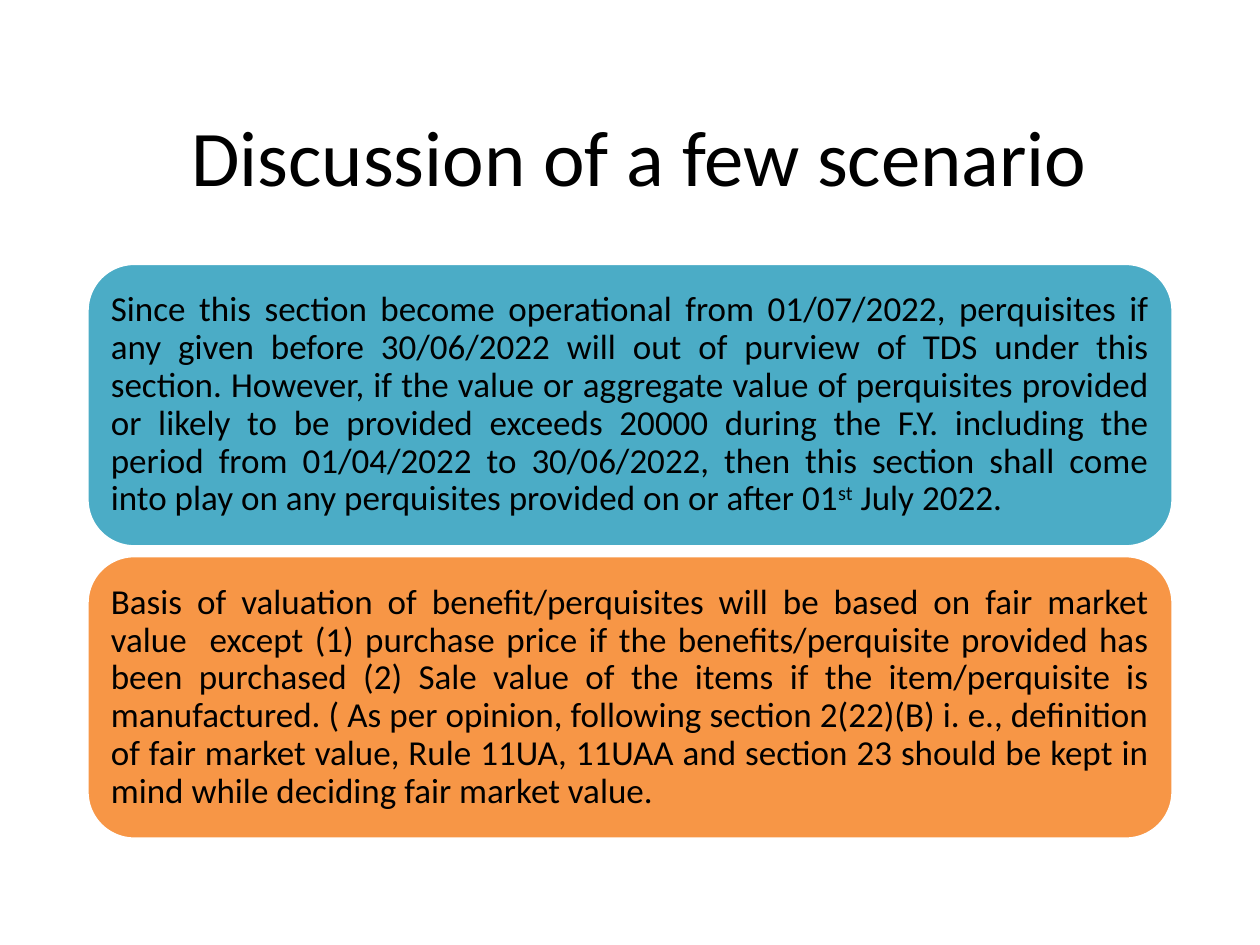
from pptx import Presentation
from pptx.dml.color import RGBColor
from pptx.enum.shapes import MSO_SHAPE
from pptx.enum.text import MSO_ANCHOR, PP_ALIGN
from pptx.util import Inches, Pt

ROUNDED = MSO_SHAPE.ROUNDED_RECTANGLE
MIDDLE = MSO_ANCHOR.MIDDLE
CENTER = PP_ALIGN.CENTER
JUSTIFY = PP_ALIGN.JUSTIFY

COLORS = {
    "text": "000000",
    "outline": "FFFFFF",
    "operation": "4BACC6",
    "valuation": "F79646",
}
LEFT, WIDTH = 0.69, 8.62
CARD_TOP, CARD_HEIGHT, CARD_GAP = 2.09, 2.25, 0.07

SCENARIOS = [
    ("operation", [
        ("Since this section become operational from 01/07/2022, perquisites if any "
         "given before 30/06/2022 will out of purview of TDS under this section. "
         "However, if the value or aggregate value of perquisites provided or likely "
         "to be provided exceeds 20000 during the F.Y. including the period from "
         "01/04/2022 to 30/06/2022, then this section shall come into play on any "
         "perquisites provided on or after 01", False),
        ("st", True),
        (" July 2022.", False),
    ]),
    ("valuation", [
        ("Basis of valuation of benefit/perquisites will be based on fair market "
         "value  except (1) purchase price if the benefits/perquisite provided has "
         "been purchased (2) Sale value of the items if the item/perquisite is "
         "manufactured. ( As per opinion, following section 2(22)(B) i. e., "
         "definition of fair market value, Rule 11UA, 11UAA and section 23 should be "
         "kept in mind while deciding fair market value.", False),
    ]),
]


def rgb(name):
    return RGBColor.from_string(COLORS[name])


def write(frame, parts, *, font, size, align, inset=None, spacing=1.0):
    frame.word_wrap = True
    frame.vertical_anchor = MIDDLE
    if inset is not None:
        frame.margin_left = frame.margin_right = Inches(inset)
        frame.margin_top = frame.margin_bottom = Inches(inset)
    paragraph = frame.paragraphs[0]
    paragraph.alignment = align
    paragraph.line_spacing = spacing
    for wording, raised in parts:
        run = paragraph.add_run()
        run.text = wording
        run.font.name = font
        run.font.size = Pt(size)
        run.font.color.rgb = rgb("text")
        if raised:
            run._r.get_or_add_rPr().set("baseline", "30000")


class ScenarioSlide:
    font = "Calibri"
    title_size = 45
    body_size = 20

    def __init__(self, slide):
        self.slide = slide

    def title(self, wording, left, top, width, height):
        heading = self.slide.shapes.add_textbox(
            Inches(left), Inches(top), Inches(width), Inches(height))
        write(heading.text_frame, [(wording, False)], font=self.font,
              size=self.title_size, align=CENTER)

    def card(self, parts, color, left, top, width, height):
        panel = self.slide.shapes.add_shape(
            ROUNDED, Inches(left), Inches(top), Inches(width), Inches(height))
        panel.shadow.inherit = False
        panel.fill.solid()
        panel.fill.fore_color.rgb = rgb(color)
        panel.line.color.rgb = rgb("outline")
        panel.line.width = Pt(2)
        write(panel.text_frame, parts, font=self.font, size=self.body_size,
              align=JUSTIFY, inset=0.08, spacing=0.9)


def main():
    deck = Presentation()
    deck.slide_width, deck.slide_height = Inches(10), Inches(7.5)
    page = ScenarioSlide(deck.slides.add_slide(deck.slide_layouts[6]))
    page.title(" Discussion of a few scenario", LEFT, 0.61, WIDTH, 1.24)
    for row, (color, parts) in enumerate(SCENARIOS):
        top = CARD_TOP + row * (CARD_HEIGHT + CARD_GAP)
        page.card(parts, color, LEFT, top, WIDTH, CARD_HEIGHT)
    deck.save("out.pptx")


if __name__ == "__main__":
    main()
